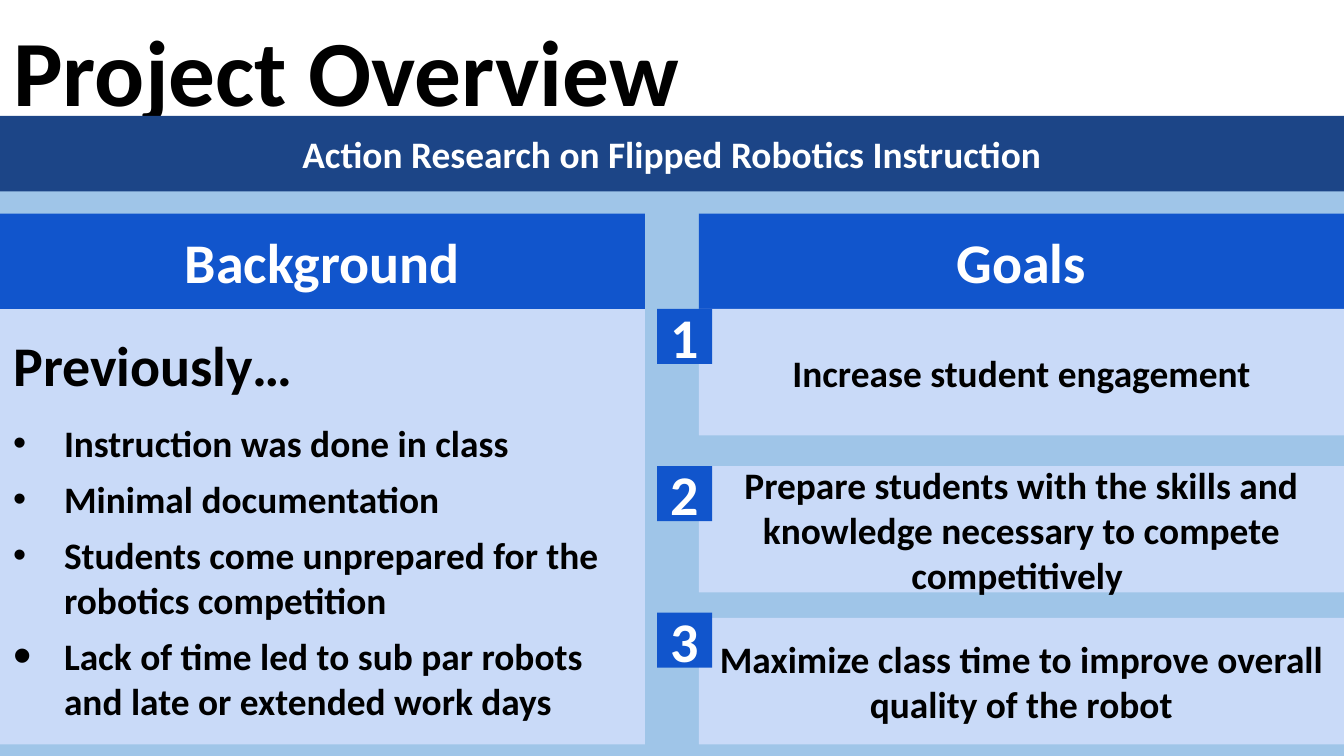
from lxml import etree
from pptx import Presentation
from pptx.dml.color import RGBColor
from pptx.enum.shapes import MSO_SHAPE
from pptx.enum.text import MSO_ANCHOR, MSO_AUTO_SIZE, PP_ALIGN
from pptx.oxml.ns import qn
from pptx.util import Cm, Pt

RECT = MSO_SHAPE.RECTANGLE
TOP, MIDDLE = MSO_ANCHOR.TOP, MSO_ANCHOR.MIDDLE
LEFT, CENTER = PP_ALIGN.LEFT, PP_ALIGN.CENTER
NO_FIT = MSO_AUTO_SIZE.NONE

COLORS = {
    "sky": "9FC5E8", "navy": "1C4587", "blue": "1155CC",
    "pale": "C9DAF8", "white": "FFFFFF", "black": "000000",
}
WIDE, HIGH = 25.4, 14.29
COL = 12.19
RIGHT = WIDE - COL
HEAD_TOP, HEAD = 4.04, 1.8
BODY_TOP = HEAD_TOP + HEAD
BODY = 8.23
GOAL, BADGE = 2.39, 1.04

POINTS = [
    ("Instruction was done in class", 100),
    ("Minimal documentation", 100),
    ("Students come unprepared for the robotics competition", 100),
    ("Lack of time led to sub par robots and late or extended work days", 140),
]
# goal text, top of its panel, top of its number
GOALS = [
    ("Increase student engagement", BODY_TOP, BODY_TOP),
    ("Prepare students with the skills and knowledge necessary "
     "to compete competitively ", 8.81, 8.81),
    ("Maximize class time to improve overall quality of the robot",
     11.68, 11.58),
]


def color(name):
    return RGBColor.from_string(COLORS[name])


def write(par, text, size=20, ink="black", align=CENTER, before=0):
    par.alignment = align
    par.space_before, par.space_after = Pt(before), Pt(0)
    par.line_spacing = 1.0
    run = par.add_run()
    run.text = text
    font = run.font
    font.name, font.size, font.bold = "Calibri", Pt(size), True
    font.color.rgb = color(ink)


def mark(par, scale=None):
    """Give the paragraph a bullet of this percent size, or none at all."""
    props = par._p.get_or_add_pPr()
    indent = Cm(0.96) if scale else 0
    props.set("marL", str(indent))
    props.set("indent", str(-indent))
    if not scale:
        etree.SubElement(props, qn("a:buNone"))
        return
    tint = etree.SubElement(props, qn("a:buClr"))
    etree.SubElement(tint, qn("a:srgbClr"), val=COLORS["black"])
    etree.SubElement(props, qn("a:buSzPct"), val=str(scale * 1000))
    etree.SubElement(props, qn("a:buFont"), typeface="Arial")
    etree.SubElement(props, qn("a:buChar"), char="•")


class Deck:
    """Holds the style and the current slide."""

    def __init__(self):
        self.prs = Presentation()
        self.prs.slide_width, self.prs.slide_height = Cm(WIDE), Cm(HIGH)
        self.slide = self.prs.slides.add_slide(self.prs.slide_layouts[1])
        fill = self.slide.background.fill
        fill.solid()
        fill.fore_color.rgb = color("sky")

    def place(self, shape, box, fill, anchor=MIDDLE):
        """Move and paint a shape, and return its text frame."""
        shape.left, shape.top, shape.width, shape.height = map(Cm, box)
        shape.fill.solid()
        shape.fill.fore_color.rgb = color(fill)
        frame = shape.text_frame
        frame.auto_size = NO_FIT
        frame.word_wrap = True
        frame.vertical_anchor = anchor
        frame.margin_left = frame.margin_right = Cm(0.25)
        frame.margin_top = frame.margin_bottom = Cm(0.25)
        return frame

    def title(self, text, box):
        frame = self.place(self.slide.shapes.title, box, "white", TOP)
        write(frame.paragraphs[0], text, size=50, align=LEFT)

    def list(self, lead, points, box):
        frame = self.place(self.slide.placeholders[1], box, "pale")
        par = frame.paragraphs[0]
        write(par, lead, size=30, align=LEFT)
        mark(par)
        for index, (text, scale) in enumerate(points):
            par = frame.add_paragraph()
            write(par, text, align=LEFT, before=6 if index else 12)
            mark(par, scale)

    def panel(self, text, box, fill, **style):
        shape = self.slide.shapes.add_shape(RECT, *map(Cm, box))
        shape.shadow.inherit = False
        shape.line.fill.background()
        write(self.place(shape, box, fill).paragraphs[0], text, **style)


def main():
    deck = Deck()
    deck.title("Project Overview", (0, 0, WIDE, 2.2))
    deck.panel("Action Research on Flipped Robotics Instruction",
               (0, 2.19, WIDE, 1.43), "navy", ink="white")
    for name, left in (("Background", 0), ("Goals", RIGHT)):
        deck.panel(name, (left, HEAD_TOP, COL, HEAD), "blue",
                   size=30, ink="white")
    deck.list("Previously…", POINTS, (0, BODY_TOP, COL, BODY))
    for number, (goal, top, tag) in enumerate(GOALS, 1):
        deck.panel(goal, (RIGHT, top, COL, GOAL), "pale")
        deck.panel(str(number), (12.42, tag, BADGE, BADGE), "blue",
                   size=30, ink="white")
    deck.prs.save("out.pptx")


if __name__ == "__main__":
    main()
